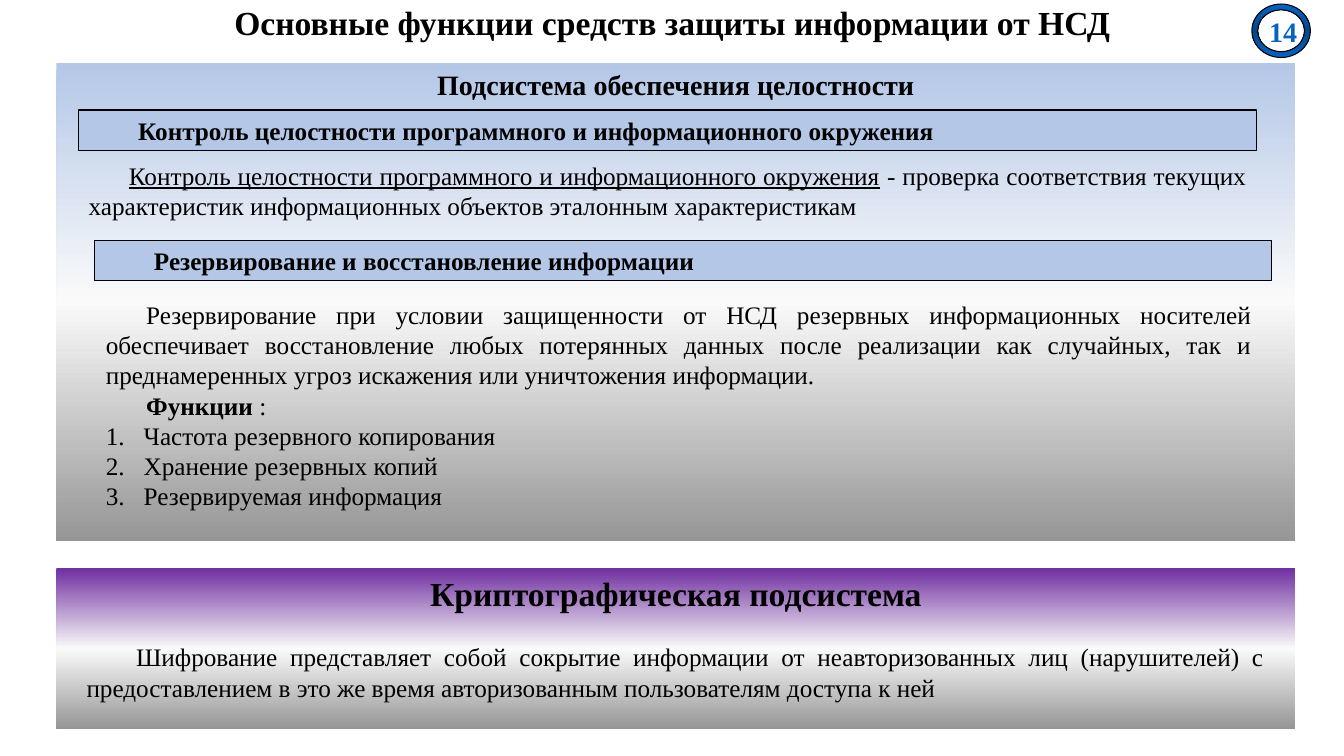
from copy import deepcopy
from dataclasses import dataclass

from lxml import etree
from pptx import Presentation
from pptx.dml.color import RGBColor
from pptx.enum.shapes import MSO_SHAPE
from pptx.enum.text import MSO_ANCHOR, MSO_AUTO_SIZE, PP_ALIGN
from pptx.oxml.ns import qn
from pptx.util import Pt

RECTANGLE, RING = MSO_SHAPE.RECTANGLE, MSO_SHAPE.DONUT
TOP, MIDDLE = MSO_ANCHOR.TOP, MSO_ANCHOR.MIDDLE
LEFT, CENTER, JUSTIFY = PP_ALIGN.LEFT, PP_ALIGN.CENTER, PP_ALIGN.JUSTIFY
FIXED_SIZE = MSO_AUTO_SIZE.NONE


@dataclass(frozen=True)
class Theme:
    font: str = "Times New Roman"
    text: str = "000000"
    bar: str = "B4C7E7"
    accent: str = "0563C1"
    integrity: tuple = ("B4C7E7", "FAFAFA", "969696")
    crypto: tuple = ("7030A0", "FAFAFA", "969696")
    badge: tuple = ("0563C1", "04478A", "0563C1")
    large: int = 24
    medium: int = 20
    normal: int = 18
    line: float = 0.75


def paint_gradient(shape, colors):
    shape.fill.gradient()
    shape.fill.gradient_angle = 270
    stop_list = shape.element.spPr.find(".//" + qn("a:gsLst"))
    stop_list.append(deepcopy(stop_list[0]))
    for index, stop in enumerate(shape.fill.gradient_stops):
        stop.position = index / 2
        stop.color.rgb = RGBColor.from_string(colors[index])


class SlideBuilder:
    def __init__(self, page, theme):
        self.page = page
        self.theme = theme

    def add_span(self, para, text, size=None, color=None, bold=False, underline=False,
                 align=LEFT, margin=0, indent=0, numbered=False):
        span = para.add_run()
        span.text = text
        font = span.font
        font.name = self.theme.font
        font.size = Pt(size or self.theme.normal)
        font.color.rgb = RGBColor.from_string(color or self.theme.text)
        font.bold = bold
        font.underline = underline
        para.alignment = align
        para.space_before = Pt(0)
        properties = para._p.get_or_add_pPr()
        properties.set("marL", str(Pt(margin)))
        properties.set("indent", str(Pt(indent)))
        for old in properties.findall(qn("a:buNone")) + properties.findall(qn("a:buAutoNum")):
            properties.remove(old)
        if numbered:
            etree.SubElement(properties, qn("a:buAutoNum"), type="arabicPeriod")
        else:
            etree.SubElement(properties, qn("a:buNone"))

    def fill_text(self, box, paragraphs, anchor=MIDDLE, inset=True):
        frame = box.text_frame
        frame.word_wrap = True
        frame.auto_size = FIXED_SIZE
        frame.vertical_anchor = anchor
        frame.margin_left = frame.margin_right = Pt(7.2 if inset else 0)
        frame.margin_top = frame.margin_bottom = Pt(3.6 if inset else 0)
        for index, spans in enumerate(paragraphs):
            para = frame.add_paragraph() if index else frame.paragraphs[0]
            for text, style in spans:
                self.add_span(para, text, **style)
        return frame

    def placeholder(self, index, bounds, paragraphs):
        box = self.page.placeholders[index]
        box.left, box.top, box.width, box.height = map(Pt, bounds)
        box.element.getparent().append(box.element)
        return self.fill_text(box, paragraphs)

    def shape(self, kind, bounds, fill, outlined=False):
        box = self.page.shapes.add_shape(kind, *map(Pt, bounds))
        box.shadow.inherit = False
        if isinstance(fill, tuple):
            paint_gradient(box, fill)
        else:
            box.fill.solid()
            box.fill.fore_color.rgb = RGBColor.from_string(fill)
        if outlined:
            box.line.color.rgb = RGBColor.from_string(self.theme.text)
            box.line.width = Pt(self.theme.line)
        else:
            box.line.fill.background()
        return box

    def panel(self, top, height, fill, heading, size):
        box = self.shape(RECTANGLE, (40.3, top, 884.9, height), fill)
        style = dict(size=size, bold=True, align=CENTER)
        self.fill_text(box, [[(heading, style)]], TOP)

    def bar(self, left, top, heading):
        box = self.shape(RECTANGLE, (left, top, 841, 28.8), self.theme.bar, True)
        self.fill_text(box, [[(heading, dict(bold=True, indent=35.4))]], TOP)

    def text(self, bounds, paragraphs, anchor=MIDDLE, inset=True):
        box = self.page.shapes.add_textbox(*map(Pt, bounds))
        self.fill_text(box, paragraphs, anchor, inset)

    def badge(self, number):
        ring = self.shape(RING, (894.2, 2.9, 41.8, 38.2), self.theme.badge, True)
        ring.adjustments[0] = 0.11
        style = dict(size=self.theme.medium, color=self.theme.accent, bold=True)
        self.text((906.5, 10.1, 28.8, 24.5), [[(number, style)]], TOP, False)


def main():
    theme = Theme()
    deck = Presentation()
    deck.slide_width, deck.slide_height = Pt(960), Pt(540)
    page = deck.slides.add_slide(deck.slide_layouts[1])
    builder = SlideBuilder(page, theme)

    prose = dict(align=JUSTIFY, indent=28.8)
    item = dict(align=JUSTIFY, margin=27, indent=-27, numbered=True)
    functions = ["Частота резервного копирования", "Хранение резервных копий",
                 "Резервируемая информация"]

    builder.panel(44.9, 341.3, theme.integrity,
                  "Подсистема обеспечения целостности", theme.medium)
    builder.bar(56.2, 78.6, "Контроль целостности программного и информационного окружения")
    builder.bar(67.5, 171.5, "Резервирование и восстановление информации")
    builder.placeholder(1, (68.4, 209.5, 833, 159.8), [
        [("Резервирование при условии защищенности от НСД резервных информационных "
          "носителей обеспечивает восстановление любых потерянных данных после "
          "реализации как случайных, так и преднамеренных угроз искажения или "
          "уничтожения информации.", prose)],
        [("Функции ", dict(prose, bold=True)), (":", prose)],
        *[[(function, item)] for function in functions],
    ])
    builder.text((56.2, 110.2, 841, 51.1), [
        [("Контроль целостности программного и информационного окружения",
          dict(prose, underline=True)),
         (" - проверка соответствия текущих характеристик информационных объектов "
          "эталонным характеристикам", prose)],
    ])
    builder.panel(406, 114.5, theme.crypto, "Криптографическая подсистема", theme.large)
    builder.text((54.7, 454.3, 855.4, 51.1), [
        [("Шифрование представляет собой сокрытие информации от неавторизованных лиц "
          "(нарушителей) с предоставлением в это же время авторизованным пользователям "
          "доступа к ней", dict(prose, indent=35.4))],
    ])
    title = builder.placeholder(0, (66.2, -2.9, 828, 41), [
        [("Основные функции средств защиты информации от НСД",
          dict(size=theme.large, bold=True, align=CENTER))],
    ])
    title.paragraphs[0].line_spacing = 0.9
    builder.badge("14")
    deck.save("out.pptx")


if __name__ == "__main__":
    main()
